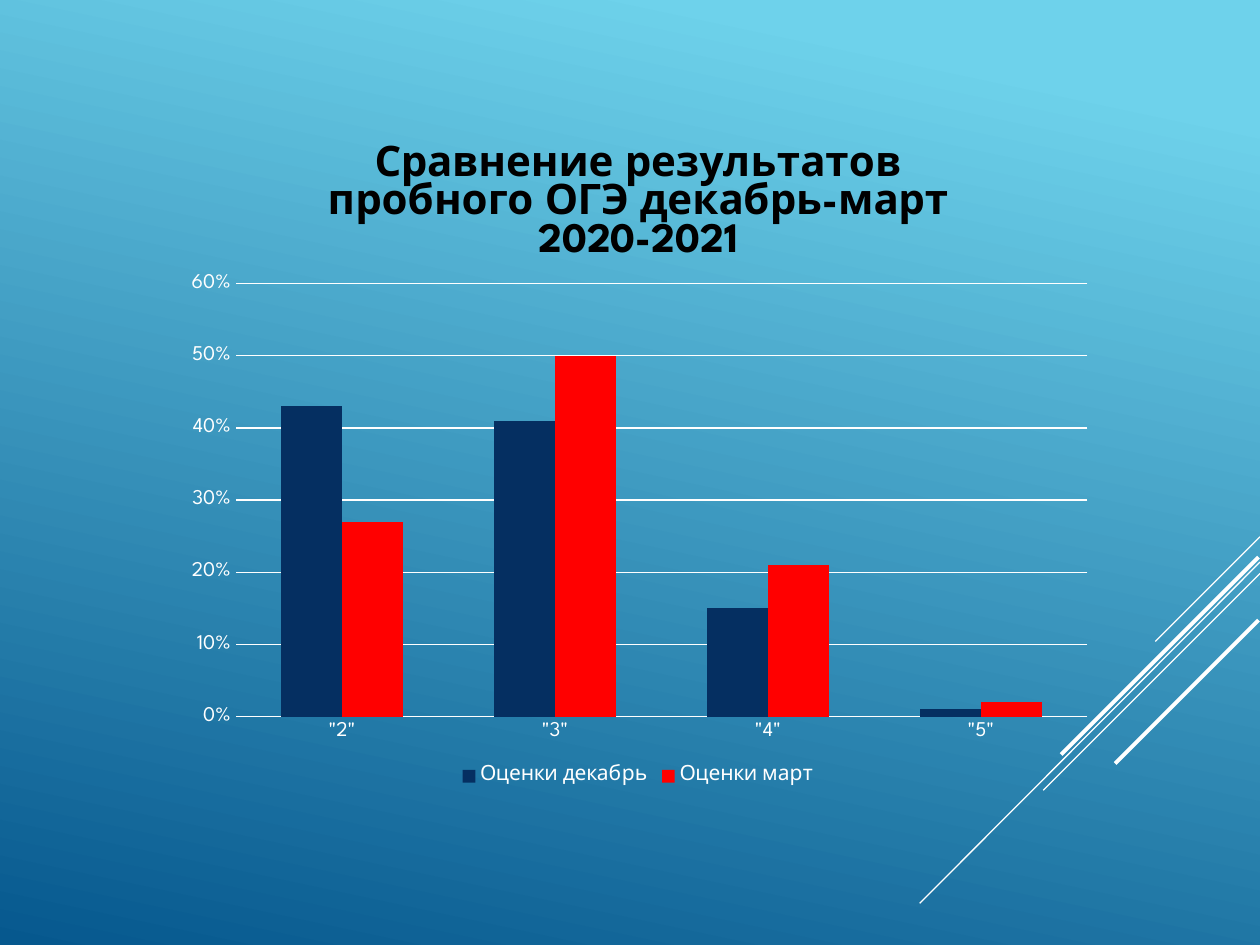
"""Build a slide comparing the December and March mock exam grades in a column chart."""
from dataclasses import dataclass

from lxml.etree import SubElement, fromstring
from pptx import Presentation
from pptx.chart.data import CategoryChartData
from pptx.dml.color import RGBColor
from pptx.enum.chart import XL_CHART_TYPE, XL_LEGEND_POSITION, XL_TICK_MARK
from pptx.enum.shapes import MSO_CONNECTOR
from pptx.oxml.ns import nsdecls, qn
from pptx.util import Cm, Pt


@dataclass(frozen=True)
class Theme:
    font: str = "League Spartan"
    sky: RGBColor = RGBColor(0x6E, 0xD2, 0xEB)
    deep: RGBColor = RGBColor(0x06, 0x58, 0x8E)
    light: RGBColor = RGBColor(0xFF, 0xFF, 0xFF)
    heading: RGBColor = RGBColor(0, 0, 0)
    december: RGBColor = RGBColor(0x05, 0x2F, 0x61)
    march: RGBColor = RGBColor(0xFF, 0, 0)
    heading_size: Pt = Pt(24)
    label_size: Pt = Pt(12)
    base_size: Pt = Pt(10)
    thin: Pt = Pt(0.75)
    thick: Pt = Pt(2.25)


def style_font(font, size, color, bold=False):
    font.name = theme.font
    font.size = size
    font.bold = bold
    font.color.rgb = color


theme = Theme()
presentation = Presentation()
presentation.slide_width = Cm(25.4)
presentation.slide_height = Cm(19.05)
slide = presentation.slides.add_slide(presentation.slide_layouts[6])

backdrop = slide.background.fill
backdrop.gradient()
backdrop.gradient_angle = 258
for stop, position, color in zip(backdrop.gradient_stops, (0.1, 1), (theme.sky, theme.deep)):
    stop.position = position
    stop.color.rgb = color

diagonals = [
    (25.4, 10.82, 23.29, 12.93, theme.thin),
    (25.4, 11.33, 18.54, 18.21, theme.thin),
    (25.4, 11.56, 21.03, 15.93, theme.thin),
    (25.37, 11.23, 21.39, 15.21, theme.thick),
    (25.37, 12.5, 22.48, 15.39, theme.thick),
]
for right, top, left, bottom, width in diagonals:
    diagonal = slide.shapes.add_connector(
        MSO_CONNECTOR.STRAIGHT, Cm(right), Cm(top), Cm(left), Cm(bottom))
    diagonal.line.color.rgb = theme.light
    diagonal.line.width = width
    SubElement(diagonal._element.spPr, qn("a:effectLst"))

grades = CategoryChartData(number_format="0%")
grades.categories = ['"2"', '"3"', '"4"', '"5"']
grades.add_series("Оценки декабрь", (0.43, 0.41, 0.15, 0.01))
grades.add_series("Оценки март", (0.27, 0.5, 0.21, 0.02))
chart = slide.shapes.add_chart(
    XL_CHART_TYPE.COLUMN_CLUSTERED, Cm(3.43), Cm(2.31), Cm(18.87), Cm(13.64), grades).chart
style_font(chart.font, theme.base_size, theme.light)

chart.has_title = True
heading = chart.chart_title.text_frame
heading.text = "Сравнение результатов пробного ОГЭ декабрь-март 2020-2021"
style_font(heading.paragraphs[0].runs[0].font, theme.heading_size, theme.heading, bold=True)
chart.chart_title.include_in_layout = False

chart.has_legend = True
chart.legend.position = XL_LEGEND_POSITION.BOTTOM
chart.legend.include_in_layout = False
style_font(chart.legend.font, theme.label_size, theme.light)

for axis in (chart.category_axis, chart.value_axis):
    axis.major_tick_mark = axis.minor_tick_mark = XL_TICK_MARK.NONE
    axis.format.line.fill.background()
    style_font(axis.tick_labels.font, theme.label_size, theme.light)

percent = chart.value_axis
percent.minimum_scale, percent.maximum_scale, percent.major_unit = 0, 0.6, 0.1
percent.tick_labels.number_format = "0%"
percent.tick_labels.number_format_is_linked = False
percent.major_gridlines.format.line.color.rgb = theme.light
percent.major_gridlines.format.line.width = theme.thin

columns = chart.plots[0]
columns.gap_width = 150
columns.overlap = 0
columns.vary_by_categories = False
for exam, color in zip(columns.series, (theme.december, theme.march)):
    exam.format.fill.solid()
    exam.format.fill.fore_color.rgb = color

plot_area = chart._chartSpace.chart.plotArea
for automatic in plot_area.findall(qn("c:layout")):
    plot_area.remove(automatic)
plot_area.insert(0, fromstring(
    f'<c:layout {nsdecls("c")}><c:manualLayout><c:layoutTarget val="inner"/>'
    '<c:xMode val="edge"/><c:yMode val="edge"/><c:x val="0.07"/><c:y val="0.25"/>'
    '<c:w val="0.91"/><c:h val="0.64"/></c:manualLayout></c:layout>'))

presentation.save("out.pptx")
